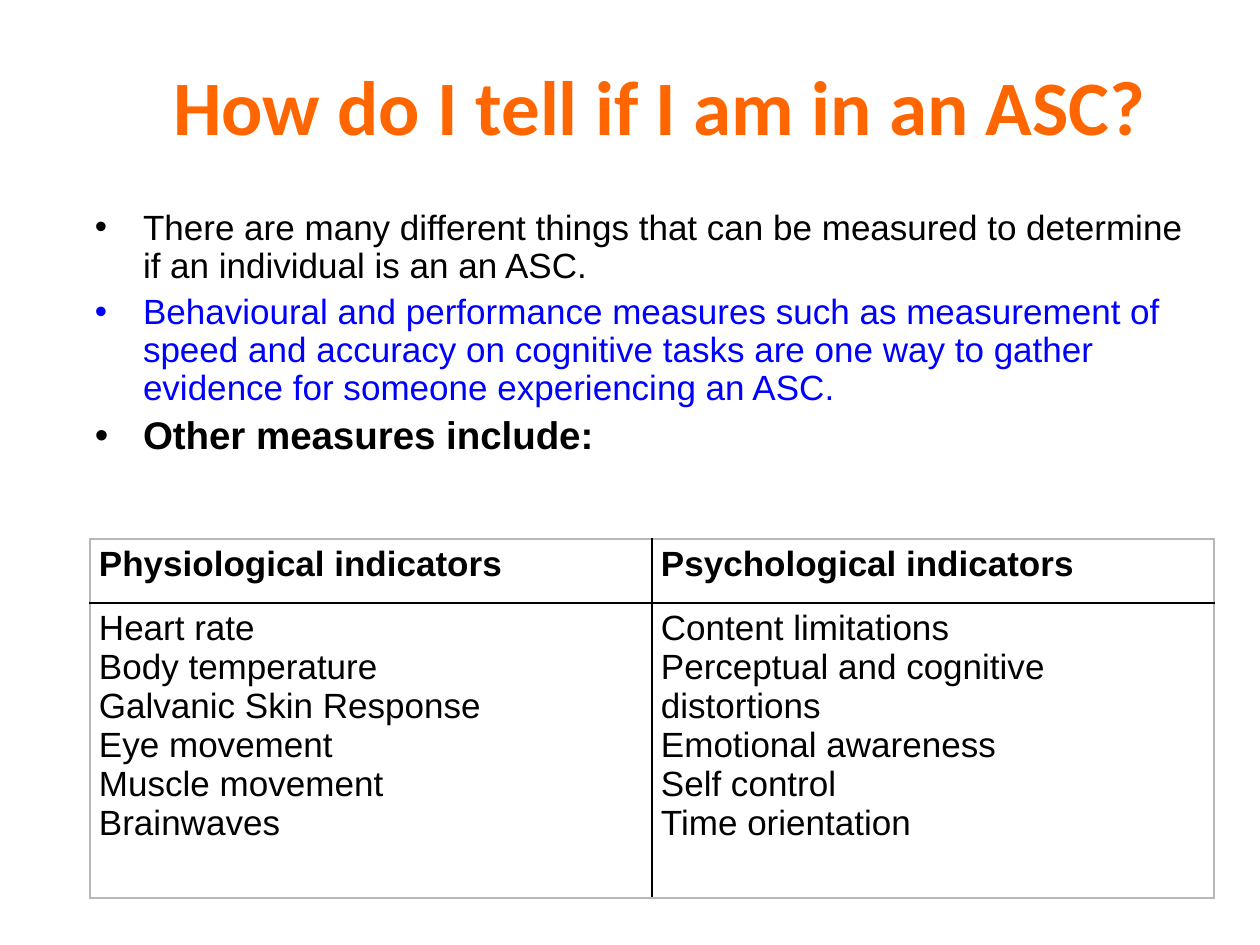
from dataclasses import dataclass

from lxml.etree import SubElement
from pptx import Presentation
from pptx.dml.color import RGBColor
from pptx.enum.text import MSO_ANCHOR, MSO_AUTO_SIZE, PP_ALIGN
from pptx.oxml.ns import qn
from pptx.util import Emu, Pt

SCALE = 914400 / 126
ORANGE = RGBColor(0xFF, 0x66, 0x00)
BLACK = RGBColor(0x00, 0x00, 0x00)
BLUE = RGBColor(0x00, 0x00, 0xFF)
GREY = RGBColor(0xB8, 0xB8, 0xB8)


def px(count: int) -> Emu:
    return Emu(round(count * SCALE))


@dataclass
class Box:
    left: int
    top: int
    width: int
    height: int

    def place(self, shape) -> None:
        shape.left, shape.top = px(self.left), px(self.top)
        shape.width, shape.height = px(self.width), px(self.height)


@dataclass
class Point:
    text: str
    color: RGBColor = BLACK
    size: int = 20
    bold: bool = False


@dataclass
class Column:
    head: str
    items: list[str]


POINTS = [
    Point("There are many different things that can be measured to determine if an individual is an an ASC."),
    Point("Behavioural and performance measures such as measurement of speed and accuracy on cognitive tasks "
          "are one way to gather evidence for someone experiencing an ASC.", BLUE),
    Point("Other measures include:", size=22, bold=True),
]
COLUMNS = [
    Column("Physiological indicators",
           ["Heart rate", "Body temperature", "Galvanic Skin Response",
            "Eye movement", "Muscle movement", "Brainwaves"]),
    Column("Psychological indicators",
           ["Content limitations", "Perceptual and cognitive distortions",
            "Emotional awareness", "Self control", "Time orientation"]),
]
TITLE = Box(123, 26, 1074, 158)
BODY = Box(89, 204, 1106, 281)
GRID = Box(90, 539, 1124, 359)
ROWS = [64, 295]


def style(par, size: int, color: RGBColor, bold: bool, face: str = "Arial") -> None:
    font = par.font
    font.name, font.size, font.bold = face, Pt(size), bold
    font.color.rgb = color


def draw_title(shape, text: str) -> None:
    TITLE.place(shape)
    frame = shape.text_frame
    frame.text = text
    frame.vertical_anchor = MSO_ANCHOR.MIDDLE
    par = frame.paragraphs[0]
    par.alignment = PP_ALIGN.CENTER
    style(par, 44, ORANGE, True, "Calibri")


def draw_body(shape, points: list[Point]) -> None:
    BODY.place(shape)
    frame = shape.text_frame
    frame.text = "\n".join(point.text for point in points)
    frame.auto_size = MSO_AUTO_SIZE.NONE
    frame.margin_left = frame.margin_right = px(6)
    frame.margin_top = frame.margin_bottom = px(6)
    for par, point in zip(frame.paragraphs, points):
        style(par, point.size, point.color, point.bold)
        par.line_spacing, par.space_before = 0.9, Pt(5)
        props = par._p.get_or_add_pPr()
        props.set("marL", str(px(48)))
        props.set("indent", str(-px(48)))
        SubElement(props, qn("a:buChar")).set("char", "•")
        props.append(props.find(qn("a:defRPr")))


def draw_edge(cell, side: str, color: RGBColor) -> None:
    line = SubElement(cell._tc.get_or_add_tcPr(), qn(f"a:{side}"), w=str(Pt(1)))
    fill = SubElement(line, qn("a:solidFill"))
    SubElement(fill, qn("a:srgbClr"), val=str(color))


def draw_cell(cell, lines: list[str], bold: bool, edges: dict[str, RGBColor]) -> None:
    cell.text = "\n".join(lines)
    cell.margin_left = cell.margin_right = px(9)
    cell.margin_top = cell.margin_bottom = px(6)
    for par in cell.text_frame.paragraphs:
        style(par, 20, BLACK, bold)
    for side, color in edges.items():
        draw_edge(cell, side, color)
    cell.fill.background()


def draw_table(shapes, columns: list[Column]) -> None:
    frame = shapes.add_table(len(ROWS), len(columns), 0, 0, px(GRID.width), px(GRID.height))
    GRID.place(frame)
    table = frame.table
    table.first_row = table.horz_banding = False
    for row, height in zip(table.rows, ROWS):
        row.height = px(height)
    last = len(columns) - 1
    for col, column in enumerate(columns):
        table.columns[col].width = px(GRID.width // len(columns))
        for row, lines in enumerate([[column.head], column.items]):
            edges = {
                "lnL": BLACK if col else GREY,
                "lnR": BLACK if col < last else GREY,
                "lnT": BLACK if row else GREY,
                "lnB": GREY if row else BLACK,
            }
            draw_cell(table.cell(row, col), lines, row == 0, edges)


def main() -> None:
    deck = Presentation()
    deck.slide_width, deck.slide_height = px(1260), px(945)
    slide = deck.slides.add_slide(deck.slide_layouts[1])
    draw_title(slide.shapes.title, "How do I tell if I am in an ASC?")
    draw_body(slide.placeholders[1], POINTS)
    draw_table(slide.shapes, COLUMNS)
    deck.save("out.pptx")


if __name__ == "__main__":
    main()
